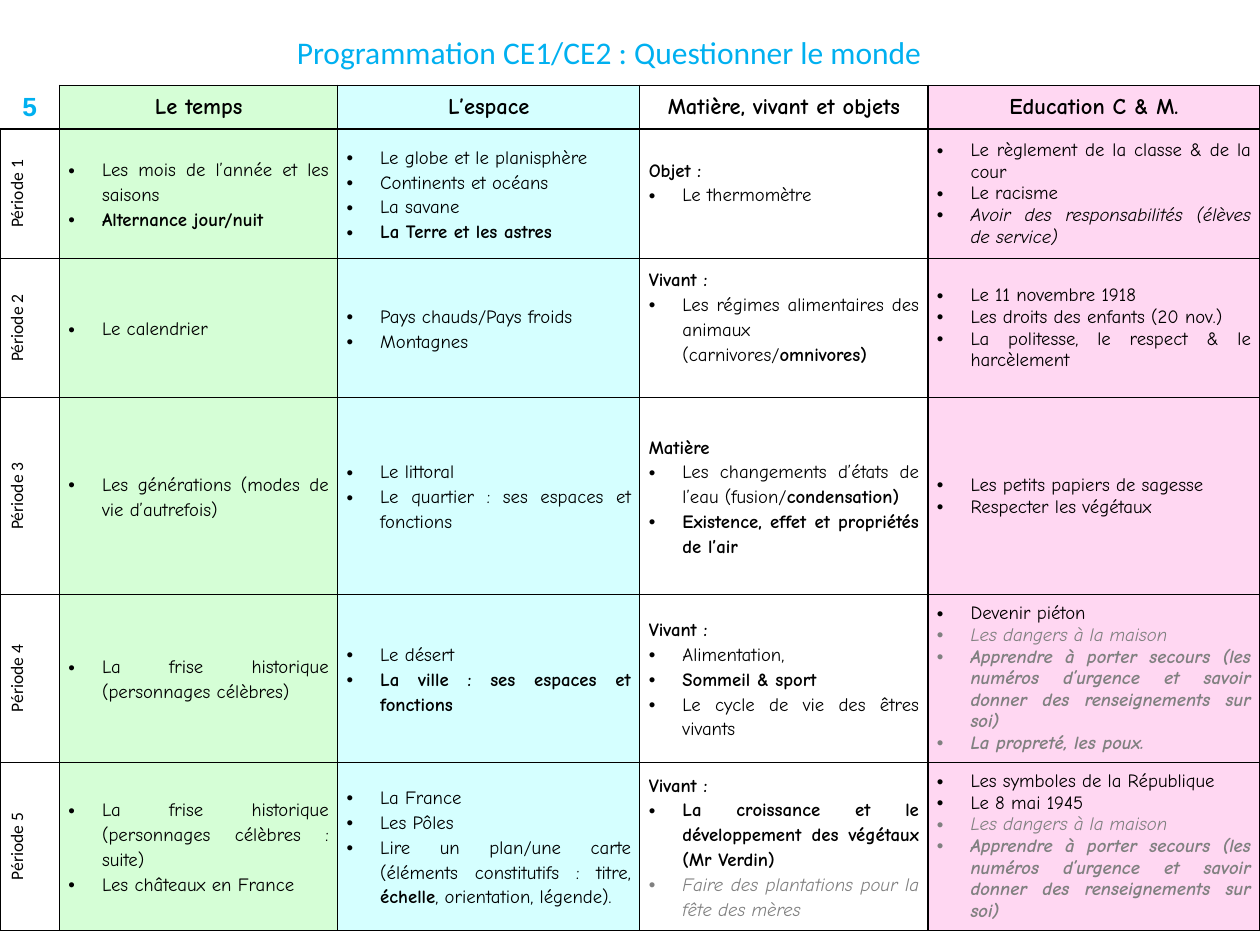
from dataclasses import dataclass

from lxml import etree
from pptx import Presentation
from pptx.dml.color import RGBColor
from pptx.enum.text import MSO_ANCHOR, PP_ALIGN
from pptx.oxml.ns import qn
from pptx.util import Cm, Pt

MIDDLE = MSO_ANCHOR.MIDDLE
CENTER, JUSTIFY = PP_ALIGN.CENTER, PP_ALIGN.JUSTIFY


@dataclass(frozen=True)
class Theme:
    accent: str = "00B0F0"
    ink: str = "000000"
    muted: str = "808080"
    columns: tuple = (None, "D5FED6", "D5FFFF", None, "FFD7F2")
    title_font: str = "Calibri"
    level_font: str = "Arial"
    body_font: str = "Comic Neue"
    title_size: float = 25.2
    level_size: float = 21
    header_size: float = 18
    body_size: float = 15
    period_size: float = 14
    border: float = 1


THEME = Theme()


@dataclass(frozen=True)
class Run:
    text: str
    bold: bool = False
    italic: bool = False
    color: str = THEME.ink
    font: str = THEME.body_font
    size: float = THEME.body_size


@dataclass(frozen=True)
class Para:
    runs: tuple
    bullet: bool = True


def item(text: str, bold: bool = False) -> Para:
    return Para((Run(text, bold),))


def heading(text: str) -> Para:
    return Para((Run(text, bold=True),), bullet=False)


def optional(text: str, bold: bool = False) -> Para:
    return Para((Run(text, bold, italic=True, color=THEME.muted),))


# Content: one row per period, one list per subject
HOME_DANGERS = optional("Les dangers à la maison")
FIRST_AID = optional("Apprendre à porter secours (les numéros d’urgence et savoir "
                     "donner des renseignements sur soi)", bold=True)
HEADERS = ["Le temps", "L’espace", "Matière, vivant et objets", "Education C & M."]
PERIODS = [
    [
        [item("Les mois de l’année et les saisons"),
         item("Alternance jour/nuit", bold=True)],
        [item("Le globe et le planisphère"), item("Continents et océans"),
         item("La savane"), item("La Terre et les astres", bold=True)],
        [heading("Objet : "), item("Le thermomètre ")],
        [item("Le règlement de la classe & de la cour"), item("Le racisme"),
         Para((Run("Avoir des responsabilités (élèves de service) ", italic=True),))],
    ],
    [
        [item("Le calendrier")],
        [item("Pays chauds/Pays froids"), item("Montagnes")],
        [heading("Vivant : "),
         Para((Run("Les régimes alimentaires des animaux (carnivores/"),
               Run("omnivores)", bold=True)))],
        [item("Le 11 novembre 1918"), item("Les droits des enfants (20 nov.) "),
         item("La politesse, le respect & le harcèlement")],
    ],
    [
        [item("Les générations (modes de vie d’autrefois) ")],
        [item("Le littoral"), item("Le quartier : ses espaces et fonctions")],
        [heading("Matière"),
         Para((Run("Les changements d’états de l’eau (fusion/"),
               Run("condensation)", bold=True))),
         item("Existence, effet et propriétés de l’air", bold=True)],
        [item("Les petits papiers de sagesse"), item("Respecter les végétaux")],
    ],
    [
        [item("La frise historique (personnages célèbres) ")],
        [item("Le désert"), item("La ville : ses espaces et fonctions", bold=True)],
        [heading("Vivant : "), item("Alimentation, "),
         item("Sommeil & sport", bold=True),
         item("Le cycle de vie des êtres vivants ")],
        [item("Devenir piéton"), HOME_DANGERS, FIRST_AID,
         optional("La propreté, les poux. ", bold=True)],
    ],
    [
        [item("La frise historique (personnages célèbres : suite) "),
         item("Les châteaux en France")],
        [item("La France "), item("Les Pôles"),
         Para((Run("Lire un plan/une carte (éléments constitutifs : titre, "),
               Run("échelle", bold=True),
               Run(", orientation, légende). ")))],
        [heading("Vivant : "),
         item("La croissance et le développement des végétaux (Mr Verdin) ", bold=True),
         optional("Faire des plantations pour la fête des mères")],
        [item("Les symboles de la République "), item("Le 8 mai 1945"),
         HOME_DANGERS, FIRST_AID],
    ],
]

# Table geometry in centimetres
COL_WIDTHS = [1.68, 7.85, 8.53, 8.13, 9.37]
ROW_HEIGHTS = [1.24, 3.66, 3.92, 5.56, 4.74, 4.74]
TABLE_TOP = 2.4
HANGING = Cm(0.95)
RAISED_CELLS = {(1, 3), (2, 3)}  # text sits one half line above the middle
RAISED_MARGIN = Cm(0.68)


def add_run(p, run: Run) -> None:
    r = p.add_run()
    r.text = run.text
    r.font.name, r.font.size = run.font, Pt(run.size)
    r.font.bold, r.font.italic = run.bold, run.italic
    r.font.color.rgb = RGBColor.from_string(run.color)


def set_hanging(p, bullet: bool) -> None:
    pPr = p._p.get_or_add_pPr()
    pPr.set("marL", str(HANGING))
    pPr.set("indent", str(-HANGING))
    if bullet:
        etree.SubElement(pPr, qn("a:buFont"), typeface="Arial")
        etree.SubElement(pPr, qn("a:buChar"), char="•")
    else:
        etree.SubElement(pPr, qn("a:buNone"))


def style_cell(cell, fill: str | None, sides: str, inset_x: float, inset_y: float) -> None:
    """Set margins, borders on the given sides (of LRTB) and fill."""
    cell.vertical_anchor = MIDDLE
    cell.margin_left = cell.margin_right = Cm(inset_x)
    cell.margin_top = cell.margin_bottom = Cm(inset_y)
    tcPr = cell._tc.get_or_add_tcPr()
    for side in "LRTB":
        ln = etree.SubElement(tcPr, qn(f"a:ln{side}"), w=str(Pt(THEME.border)))
        if side in sides:
            solid = etree.SubElement(ln, qn("a:solidFill"))
            etree.SubElement(solid, qn("a:srgbClr"), val=THEME.ink)
        else:
            etree.SubElement(ln, qn("a:noFill"))
    if fill:
        cell.fill.solid()
        cell.fill.fore_color.rgb = RGBColor.from_string(fill)
    else:
        cell.fill.background()


def fill_label(cell, run: Run, fill: str | None = None, sides: str = "LRTB") -> None:
    style_cell(cell, fill, sides, 0.36, 0.18)
    p = cell.text_frame.paragraphs[0]
    p.alignment = CENTER
    add_run(p, run)


def fill_topics(cell, paras: list[Para], fill: str | None, spacing: float | None) -> None:
    style_cell(cell, fill, "LRTB", 0.25, 0)
    tf = cell.text_frame
    for i, para in enumerate(paras):
        p = tf.add_paragraph() if i else tf.paragraphs[0]
        p.alignment = JUSTIFY
        p.line_spacing = spacing
        set_hanging(p, para.bullet)
        for run in para.runs:
            add_run(p, run)


def main() -> None:
    prs = Presentation()
    prs.slide_width, prs.slide_height = Cm(35.56), Cm(26.67)
    s = prs.slides.add_slide(prs.slide_layouts[5])
    # Title
    sp = s.shapes.title
    sp.left, sp.top, sp.width, sp.height = Cm(0.58), Cm(0.79), Cm(33.22), Cm(1.35)
    tf = sp.text_frame
    tf.vertical_anchor = MIDDLE
    p = tf.paragraphs[0]
    p.alignment = CENTER
    add_run(p, Run("Programmation CE1/CE2 : Questionner le monde", color=THEME.accent,
                   font=THEME.title_font, size=THEME.title_size))
    # Table grid
    table = s.shapes.add_table(len(ROW_HEIGHTS), len(COL_WIDTHS), 0, Cm(TABLE_TOP),
                               Cm(sum(COL_WIDTHS)), Cm(sum(ROW_HEIGHTS))).table
    table.first_row = table.horz_banding = False
    for column, width in zip(table.columns, COL_WIDTHS):
        column.width = Cm(width)
    for row, height in zip(table.rows, ROW_HEIGHTS):
        row.height = Cm(height)
    # Header row
    fill_label(table.cell(0, 0), Run("5", bold=True, color=THEME.accent,
               font=THEME.level_font, size=THEME.level_size), sides="RB")
    for c, text in enumerate(HEADERS, 1):
        fill_label(table.cell(0, c), Run(text, bold=True, size=THEME.header_size),
                   THEME.columns[c])
    # Period rows; the last column is set tighter
    for r, subjects in enumerate(PERIODS, 1):
        label = table.cell(r, 0)
        fill_label(label, Run(f"Période {r}", font=THEME.title_font,
                              size=THEME.period_size))
        label._tc.get_or_add_tcPr().set("vert", "vert270")
        for c, paras in enumerate(subjects, 1):
            cell = table.cell(r, c)
            spacing = None if c == len(subjects) else 1.15
            fill_topics(cell, paras, THEME.columns[c], spacing)
            if (r, c) in RAISED_CELLS:
                cell.margin_bottom = RAISED_MARGIN
    prs.save("out.pptx")


if __name__ == "__main__":
    main()
